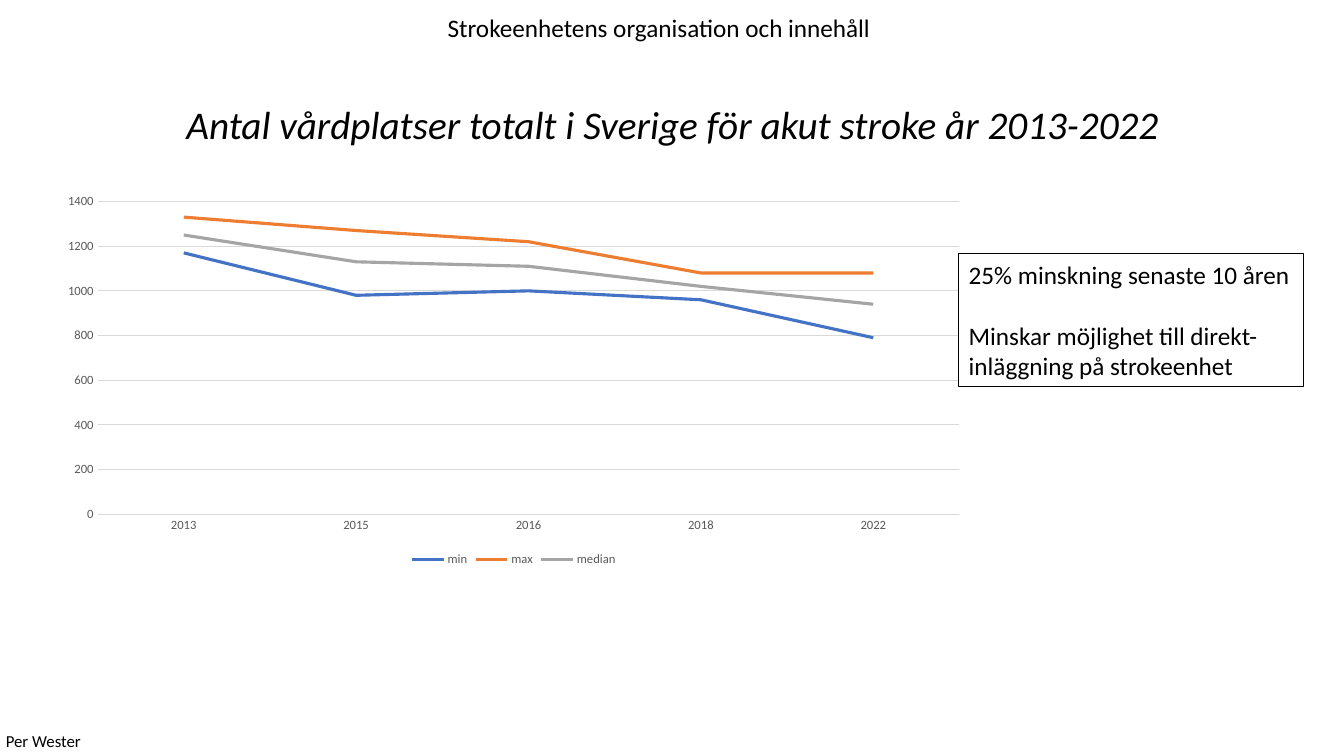
from dataclasses import dataclass

import pptx
import pptx.chart.data
import pptx.dml.color
import pptx.enum.chart
import pptx.enum.shapes
import pptx.enum.text
import pptx.util

Pt = pptx.util.Pt
Align = pptx.enum.text.PP_ALIGN
Anchor = pptx.enum.text.MSO_ANCHOR


@dataclass(frozen=True)
class Theme:
    font: str = "Calibri"
    ink: str = "000000"
    label: str = "595959"
    grid: str = "D9D9D9"
    title_pt: int = 28
    body_pt: int = 18
    small_pt: int = 12
    axis_pt: int = 9
    thin_pt: float = 0.75
    line_pt: float = 2.25


@dataclass(frozen=True)
class Box:
    left: float
    top: float
    width: float
    height: float

    def place(self, prs) -> tuple[int, int, int, int]:
        w, h = prs.slide_width / 100, prs.slide_height / 100
        return (round(self.left * w), round(self.top * h),
                round(self.width * w), round(self.height * h))


@dataclass(frozen=True)
class Label:
    box: Box
    lines: tuple[str, ...]
    size: int
    align: Align = Align.LEFT
    wrap: bool = False
    framed: bool = False
    gap_before: int = -1


@dataclass(frozen=True)
class Trend:
    name: str
    values: tuple[int, ...]
    color: str


THEME = Theme()
TITLE = "Antal vårdplatser totalt i Sverige för akut stroke år 2013-2022"
TITLE_BOX = Box(6.9, 5.33, 86.27, 19.33)
CHART_BOX = Box(3.68, 24.67, 69.09, 50.8)
YEARS = ("2013", "2015", "2016", "2018", "2022")
TRENDS = (
    Trend("min", (1170, 980, 1000, 960, 790), "4472C4"),
    Trend("max", (1330, 1270, 1220, 1080, 1080), "ED7D31"),
    Trend("median", (1250, 1130, 1110, 1020, 940), "A5A5A5"),
)
LABELS = (
    Label(Box(71.34, 33.6, 25.66, 17.47),
          ("25% minskning senaste 10 åren", "Minskar möjlighet till direkt-",
           "inläggning på strokeenhet"),
          THEME.body_pt, framed=True, gap_before=1),
    Label(Box(24.01, 0.93, 50.04, 5.33),
          ("Strokeenhetens organisation och innehåll",),
          THEME.body_pt, align=Align.CENTER, wrap=True),
    Label(Box(-0.3, 96, 7.13, 4), ("Per Wester",), THEME.small_pt),
)


def rgb(color: str) -> pptx.dml.color.RGBColor:
    return pptx.dml.color.RGBColor.from_string(color)


def set_font(font, size: int, color: str) -> None:
    font.name = THEME.font
    font.size = Pt(size)
    font.color.rgb = rgb(color)


def set_line(line, color: str, width: float) -> None:
    line.color.rgb = rgb(color)
    line.width = Pt(width)


def add_title(prs, s) -> None:
    sp = s.shapes.title
    sp.left, sp.top, sp.width, sp.height = TITLE_BOX.place(prs)
    tf = sp.text_frame
    tf.text = TITLE
    tf.word_wrap = True
    tf.vertical_anchor = Anchor.MIDDLE
    tf.margin_top = pptx.util.Inches(0.32)
    p = tf.paragraphs[0]
    p.alignment = Align.CENTER
    p.line_spacing = 0.9
    set_font(p.font, THEME.title_pt, THEME.ink)
    p.font.italic = True


def add_chart(prs, s) -> None:
    data = pptx.chart.data.CategoryChartData()
    data.categories = YEARS
    for trend in TRENDS:
        data.add_series(trend.name, trend.values)
    kind = pptx.enum.chart.XL_CHART_TYPE.LINE
    chart = s.shapes.add_chart(kind, *CHART_BOX.place(prs), data).chart
    chart.has_title = False
    set_font(chart.font, THEME.axis_pt, THEME.label)
    chart.has_legend = True
    chart.legend.position = pptx.enum.chart.XL_LEGEND_POSITION.BOTTOM
    chart.legend.include_in_layout = False
    set_font(chart.legend.font, THEME.axis_pt, THEME.label)
    for axis in (chart.category_axis, chart.value_axis):
        axis.major_tick_mark = pptx.enum.chart.XL_TICK_MARK.NONE
        axis.minor_tick_mark = pptx.enum.chart.XL_TICK_MARK.NONE
        set_font(axis.tick_labels.font, THEME.axis_pt, THEME.label)
    set_line(chart.category_axis.format.line, THEME.grid, THEME.thin_pt)
    values = chart.value_axis
    values.minimum_scale, values.maximum_scale, values.major_unit = 0, 1400, 200
    values.format.line.fill.background()
    set_line(values.major_gridlines.format.line, THEME.grid, THEME.thin_pt)
    chart.plots[0].vary_by_categories = False
    for series, trend in zip(chart.plots[0].series, TRENDS):
        series.smooth = False
        series.marker.style = pptx.enum.chart.XL_MARKER_STYLE.NONE
        set_line(series.format.line, trend.color, THEME.line_pt)


def add_label(prs, s, label: Label) -> None:
    place = label.box.place(prs)
    if label.framed:
        sp = s.shapes.add_shape(pptx.enum.shapes.MSO_SHAPE.RECTANGLE, *place)
        sp.shadow.inherit = False
        sp.fill.background()
        set_line(sp.line, THEME.ink, THEME.thin_pt)
    else:
        sp = s.shapes.add_textbox(*place)
    tf = sp.text_frame
    tf.text = "\n".join(label.lines)
    tf.word_wrap = label.wrap
    tf.auto_size = pptx.enum.text.MSO_AUTO_SIZE.SHAPE_TO_FIT_TEXT
    tf.vertical_anchor = Anchor.TOP
    for i, p in enumerate(tf.paragraphs):
        p.alignment = label.align
        set_font(p.font, label.size, THEME.ink)
        if i == label.gap_before:
            p.space_before = Pt(1.22 * label.size)


def main() -> None:
    prs = pptx.Presentation()
    prs.slide_width = pptx.util.Inches(13.33)
    prs.slide_height = pptx.util.Inches(7.5)
    s = prs.slides.add_slide(prs.slide_layouts.get_by_name("Title Only"))
    add_title(prs, s)
    add_chart(prs, s)
    for label in LABELS:
        add_label(prs, s, label)
    prs.save("out.pptx")


if __name__ == "__main__":
    main()
